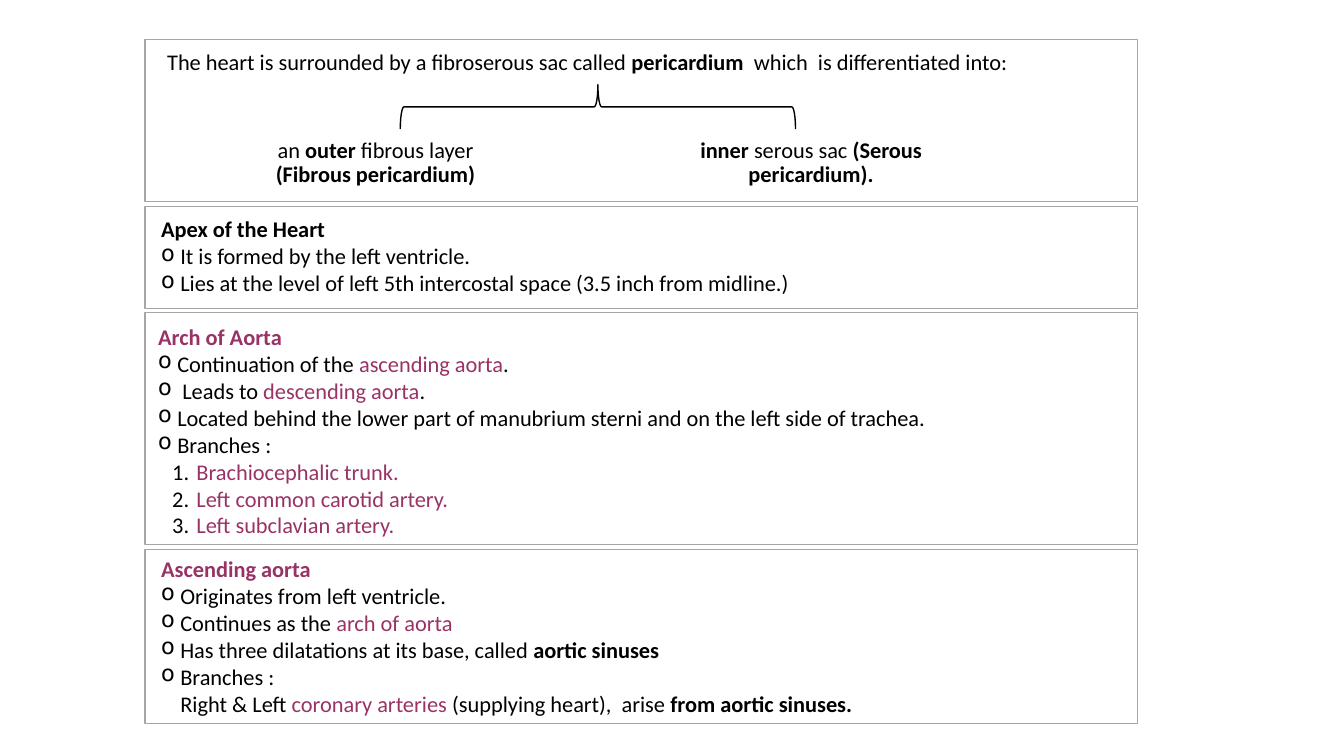
import lxml.etree
import pptx
import pptx.dml.color
import pptx.enum.shapes
import pptx.enum.text
import pptx.oxml.ns
import pptx.util

Inches = pptx.util.Inches
SHAPE = pptx.enum.shapes.MSO_SHAPE
BLACK, PLUM, GREY = "000000", "993366", "A6A6A6"
LEFT, WIDTH = 1.44, 9.84

# Run styles: bold, colour
PLAIN, BOLD, TINT, HEAD = (False, BLACK), (True, BLACK), (False, PLUM), (True, PLUM)
# Paragraph kinds: left margin, first-line indent
INDENT = {"plain": (0, 0), "item": (0.19, -0.19),
          "num": (0.38, -0.24), "more": (0.19, 0)}

APEX = [
    ("plain", [("Apex of the Heart", BOLD)]),
    ("item", [("It is formed by the left ventricle.", PLAIN)]),
    ("item", [("Lies at the level of left 5th intercostal space "
               "(3.5 inch from midline.)", PLAIN)]),
]
ARCH = [
    ("plain", [("Arch of Aorta", HEAD)]),
    ("item", [("Continuation of the ", PLAIN), ("ascending aorta", TINT), (".", PLAIN)]),
    ("item", [(" Leads to ", PLAIN), ("descending aorta", TINT), (".", PLAIN)]),
    ("item", [("Located behind the lower part of manubrium sterni "
               "and on the left side of trachea.", PLAIN)]),
    ("item", [("Branches :", PLAIN)]),
    ("num", [("Brachiocephalic trunk.", TINT)]),
    ("num", [("Left common carotid artery.", TINT)]),
    ("num", [("Left subclavian artery.", TINT)]),
]
ASCEND = [
    ("plain", [("Ascending aorta", HEAD)]),
    ("item", [("Originates from left ventricle.", PLAIN)]),
    ("item", [("Continues as the ", PLAIN), ("arch of aorta", TINT)]),
    ("item", [("Has three dilatations at its base, called ", PLAIN),
              ("aortic sinuses", BOLD)]),
    ("item", [("Branches :", PLAIN)]),
    ("more", [("Right & Left ", PLAIN), ("coronary arteries ", TINT),
              ("(supplying heart),  arise ", PLAIN), ("from aortic sinuses.", BOLD)]),
]
INTRO = [("The heart is surrounded by a fibroserous sac called ", PLAIN),
         ("pericardium  ", BOLD), ("which  is differentiated into:", PLAIN)]
OUTER = [("an ", PLAIN), ("outer ", BOLD), ("fibrous layer ", PLAIN),
         ("(Fibrous pericardium)", BOLD)]
INNER = [("inner", BOLD), (" serous sac ", PLAIN), ("(Serous pericardium).", BOLD)]


def color(value):
    return pptx.dml.color.RGBColor.from_string(value)


def bullet(para, kind):
    """Set the indent and the list mark of a paragraph."""
    props = para._p.get_or_add_pPr()
    margin, first = INDENT[kind]
    props.set("marL", str(Inches(margin)))
    props.set("indent", str(Inches(first)))

    def add(parent, tag, **attrs):
        return lxml.etree.SubElement(parent, pptx.oxml.ns.qn(tag), **attrs)

    if kind == "item":
        add(props, "a:buChar", char="o")
    elif kind == "num":
        add(add(props, "a:buClr"), "a:srgbClr", val=BLACK)
        add(props, "a:buAutoNum", type="arabicPeriod")
    else:
        add(props, "a:buNone")


def write(slide, box, paras, align=pptx.enum.text.PP_ALIGN.LEFT, space=None):
    """Add a text box with styled paragraphs."""
    frame = slide.shapes.add_textbox(*map(Inches, box)).text_frame
    frame.word_wrap = True
    for index, (kind, runs) in enumerate(paras):
        para = frame.add_paragraph() if index else frame.paragraphs[0]
        bullet(para, kind)
        para.alignment = align
        para.line_spacing = space
        para.font.name = "Calibri"
        para.font.size = pptx.util.Pt(16)
        for text, (bold, tint) in runs:
            run = para.add_run()
            run.text = text
            run.font.bold = bold
            run.font.color.rgb = color(tint)


def outline(slide, kind, box, tint):
    """Add an unfilled shape with a thin line."""
    shape = slide.shapes.add_shape(kind, *map(Inches, box))
    shape.shadow.inherit = False
    shape.fill.background()
    shape.line.color.rgb = color(tint)
    shape.line.width = pptx.util.Pt(1)
    return shape


def split(slide, left, top, width, height):
    """Framed sentence that a brace divides into two layers."""
    outline(slide, SHAPE.RECTANGLE, (left, top, width, height), GREY)
    write(slide, (left + 0.12, top + 0.07, 9.37, 0.34), [("plain", INTRO)], space=0.9)
    brace = outline(slide, SHAPE.RIGHT_BRACE,
                    (left + 4.27, top - 1.29, 0.44, 3.92), BLACK)
    brace.rotation = 270
    for shift, wide, runs in ((1, 2.57, OUTER), (5.27, 2.67, INNER)):
        write(slide, (left + shift, top + 0.94, wide, 0.59), [("plain", runs)],
              pptx.enum.text.PP_ALIGN.CENTER, 0.9)


def panel(slide, left, top, width, height, paras, dx, dy):
    """Framed heading with its list, inset by dx and dy."""
    outline(slide, SHAPE.RECTANGLE, (left, top, width, height), GREY)
    write(slide, (left + dx, top + dy, width - dx, height - dy), paras)


def main():
    deck = pptx.Presentation()
    deck.slide_width, deck.slide_height = Inches(13.33), Inches(7.5)
    slide = deck.slides.add_slide(deck.slide_layouts[6])
    split(slide, LEFT, 0.39, WIDTH, 1.61)
    panel(slide, LEFT, 2.05, WIDTH, 1.01, APEX, 0.06, 0.04)
    panel(slide, LEFT, 3.1, WIDTH, 2.3, ARCH, 0.03, 0.06)
    panel(slide, LEFT, 5.45, WIDTH, 1.73, ASCEND, 0.06, 0.01)
    deck.save("out.pptx")


if __name__ == "__main__":
    main()
